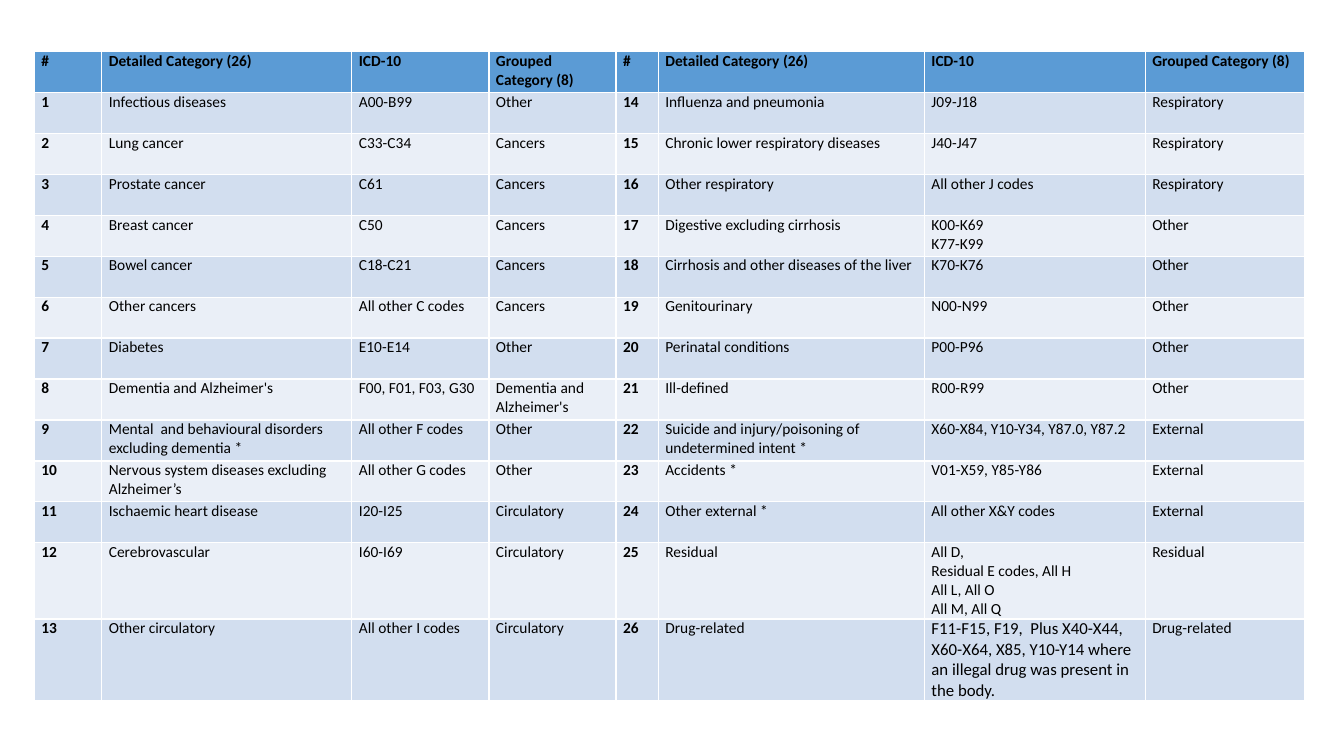
"""Cause-of-death categories with their ICD-10 codes, in two side-by-side halves."""
from pptx import Presentation
from pptx.dml.color import RGBColor as Rgb
from pptx.util import Inches as In, Pt

HEADINGS = ("#", "Detailed Category (26)", "ICD-10", "Grouped Category (8)")
CATEGORIES = [
    ("Infectious diseases", "A00-B99", "Other"),
    ("Lung cancer", "C33-C34", "Cancers"),
    ("Prostate cancer", "C61", "Cancers"),
    ("Breast cancer", "C50", "Cancers"),
    ("Bowel cancer", "C18-C21", "Cancers"),
    ("Other cancers", "All other C codes", "Cancers"),
    ("Diabetes", "E10-E14", "Other"),
    ("Dementia and Alzheimer's", "F00, F01, F03, G30", "Dementia and Alzheimer's"),
    ("Mental  and behavioural disorders excluding dementia *", "All other F codes", "Other"),
    ("Nervous system diseases excluding Alzheimer’s", "All other G codes", "Other"),
    ("Ischaemic heart disease", "I20-I25", "Circulatory"),
    ("Cerebrovascular", "I60-I69", "Circulatory"),
    ("Other circulatory", "All other I codes", "Circulatory"),
    ("Influenza and pneumonia", "J09-J18", "Respiratory"),
    ("Chronic lower respiratory diseases", "J40-J47", "Respiratory"),
    ("Other respiratory", "All other J codes", "Respiratory"),
    ("Digestive excluding cirrhosis", "K00-K69\nK77-K99", "Other"),
    ("Cirrhosis and other diseases of the liver", "K70-K76", "Other"),
    ("Genitourinary", "N00-N99", "Other"),
    ("Perinatal conditions", "P00-P96", "Other"),
    ("Ill-defined", "R00-R99", "Other"),
    ("Suicide and injury/poisoning of undetermined intent *",
     "X60-X84, Y10-Y34, Y87.0, Y87.2", "External"),
    ("Accidents *", "V01-X59, Y85-Y86", "External"),
    ("Other external *", "All other X&Y codes", "External"),
    ("Residual", "All D,\nResidual E codes, All H\nAll L, All O\nAll M, All Q", "Residual"),
    ("Drug-related", "F11-F15, F19,  Plus X40-X44, X60-X64, X85, Y10-Y14 where "
     "an illegal drug was present in the body.", "Drug-related"),
]
COLORS = {"heading": "5B9BD5", "odd": "D2DEEF", "even": "EAEFF7", "text": "000000"}
COLUMN_WIDTHS = (0.67, 2.48, 1.36, 1.26, 0.42, 2.64, 2.19, 1.58)
LEFT, TOP, ROWS_HEIGHT, TABLE_HEIGHT = 0.34, 0.51, 5.69, 6.4
CELL_FORMAT = {"margin_left": In(0.07), "margin_right": In(0.07),
               "margin_top": 0, "margin_bottom": 0}
TEXT_SIZE, LONG_CODE_SIZE, LONG_CODE = 11, 12, 60


def fill_cell(cell, text, band, bold):
    """Write one cell with its band colour and text format."""
    for name, value in CELL_FORMAT.items():
        setattr(cell, name, value)
    cell.fill.solid()
    cell.fill.fore_color.rgb = Rgb.from_string(COLORS[band])
    cell.text = text
    size = LONG_CODE_SIZE if len(text) > LONG_CODE else TEXT_SIZE
    font_format = {"name": "Calibri", "size": Pt(size), "bold": bold}
    for paragraph in cell.text_frame.paragraphs:
        for run in paragraph.runs:
            for name, value in font_format.items():
                setattr(run.font, name, value)
            run.font.color.rgb = Rgb.from_string(COLORS["text"])


def main():
    """Build the slide and save it."""
    deck = Presentation()
    deck.slide_width, deck.slide_height = In(13.33), In(7.5)
    slide = deck.slides.add_slide(deck.slide_layouts[6])

    numbered = [(str(number), *category) for number, category in enumerate(CATEGORIES, 1)]
    half = len(numbered) // 2
    lines = [HEADINGS * 2] + [a + b for a, b in zip(numbered[:half], numbered[half:])]

    frame = slide.shapes.add_table(len(lines), len(COLUMN_WIDTHS), In(LEFT), In(TOP),
                                   In(sum(COLUMN_WIDTHS)), In(ROWS_HEIGHT))
    categories = frame.table
    for column, width in zip(categories.columns, COLUMN_WIDTHS):
        column.width = In(width)
    for row, line in enumerate(lines):
        band = "heading" if row == 0 else ("even", "odd")[row % 2]
        for column, text in enumerate(line):
            is_number = column % len(HEADINGS) == 0
            fill_cell(categories.cell(row, column), text, band, row == 0 or is_number)
    frame.height = In(TABLE_HEIGHT)
    deck.save("out.pptx")


if __name__ == "__main__":
    main()
